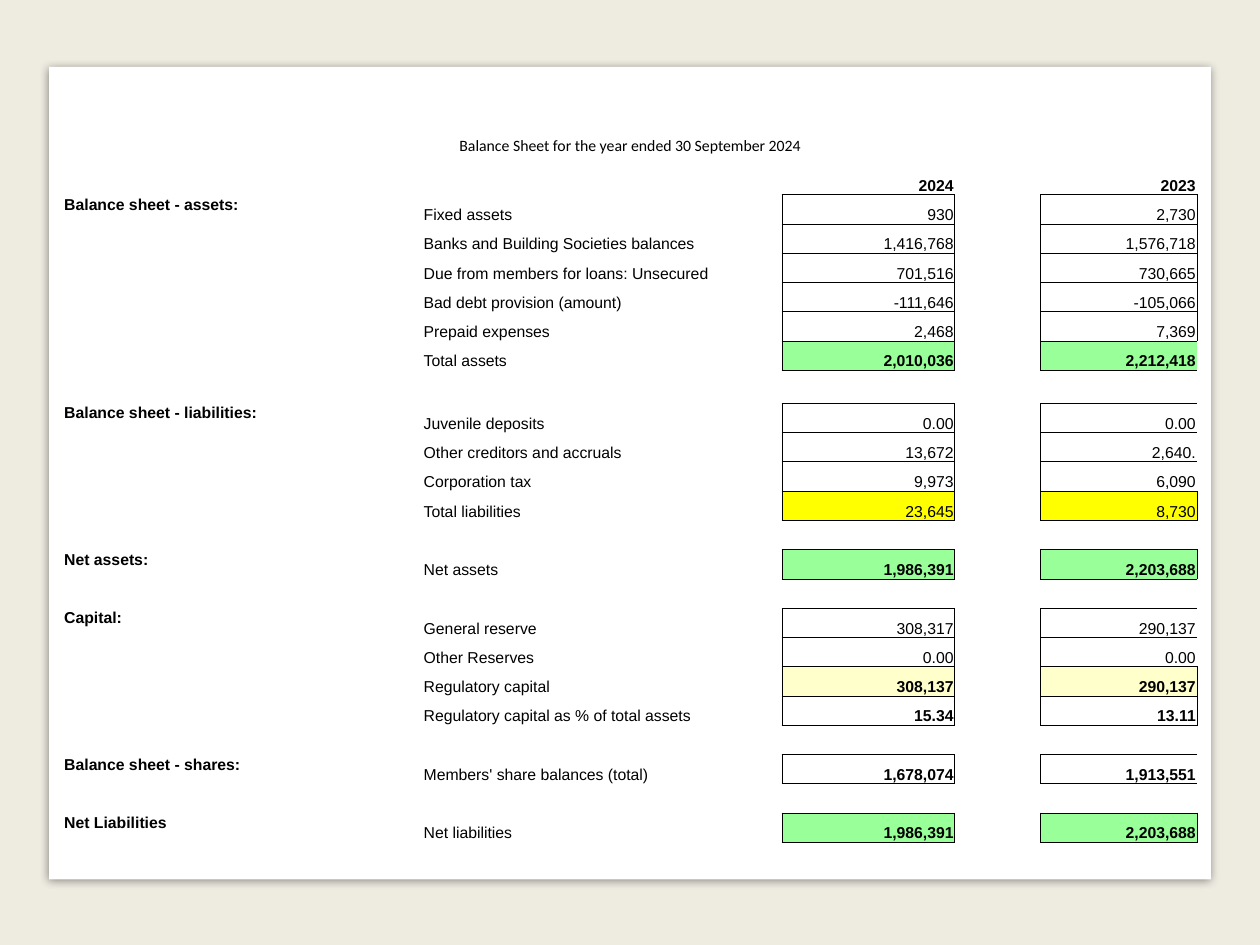
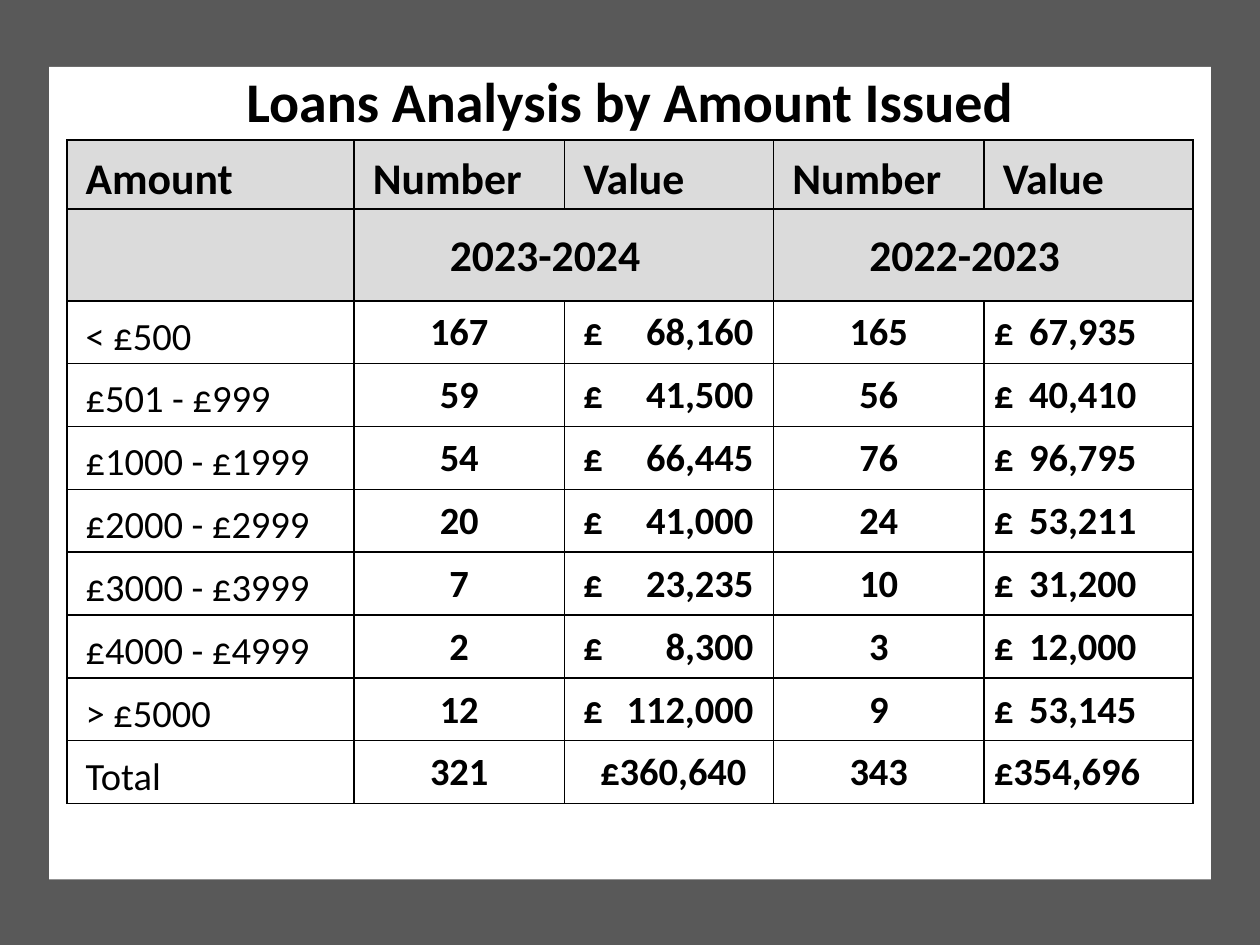
from lxml import etree
from pptx import Presentation
from pptx.dml.color import RGBColor
from pptx.enum.shapes import MSO_SHAPE
from pptx.enum.text import MSO_ANCHOR, PP_ALIGN
from pptx.oxml.ns import qn
from pptx.util import Inches, Pt

RECT = MSO_SHAPE.RECTANGLE
LEFT, MID, RIGHT = PP_ALIGN.LEFT, PP_ALIGN.CENTER, PP_ALIGN.RIGHT
TOP, CENTRE, BASE = MSO_ANCHOR.TOP, MSO_ANCHOR.MIDDLE, MSO_ANCHOR.BOTTOM
COLORS = {"ink": "000000", "white": "FFFFFF", "cream": "EEECE1", "slate": "595959",
          "head": "DBDBDB", "green": "99FF99", "yellow": "FFFF00", "pale": "FFFFCC"}
UNIT = Inches(0.1)
COLS, ROWS = 100, 75
PLAIN = "{2D5ABB26-0587-4C30-8999-92F81FD0307C}"
TIGHT = (0.01, 0.01, 0.01, 0)
WIDE = (0.15, 0.02, 0.15, 0)
EDGES = "LRTB"

GROUPS = [
    ("Balance sheet - assets:", [
        ("Fixed assets", "930", "2,730", None, False, ""),
        ("Banks and Building Societies balances", "1,416,768", "1,576,718", None, False, ""),
        ("Due from members for loans: Unsecured", "701,516", "730,665", None, False, ""),
        ("Bad debt provision (amount)", "-111,646", "-105,066", None, False, ""),
        ("Prepaid expenses", "2,468", "7,369", None, False, ""),
        ("Total assets", "2,010,036", "2,212,418", "green", True, "both")]),
    ("Balance sheet - liabilities:", [
        ("Juvenile deposits", "0.00", "0.00", None, False, "last"),
        ("Other creditors and accruals", "13,672", "2,640.", None, False, "last"),
        ("Corporation tax", "9,973", "6,090", None, False, "last"),
        ("Total liabilities", "23,645", "8,730", "yellow", False, "")]),
    ("Net assets:", [
        ("Net assets", "1,986,391", "2,203,688", "green", True, "")]),
    ("Capital:", [
        ("General reserve", "308,317", "290,137", None, False, "last"),
        ("Other Reserves", "0.00", "0.00", None, False, "both"),
        ("Regulatory capital", "308,137", "290,137", "pale", True, ""),
        ("Regulatory capital as % of total assets", "15.34", "13.11", None, True, "")]),
    ("Balance sheet - shares:", [
        ("Members' share balances (total)", "1,678,074", "1,913,551", "white", True, "last")]),
    ("Net Liabilities", [
        ("Net liabilities", "1,986,391", "2,203,688", "green", True, "")]),
]

LOANS = [
    ("< £500", "167", "68,160", "165", "67,935"),
    ("£501 - £999", "59", "41,500", "56", "40,410"),
    ("£1000 - £1999", "54", "66,445", "76", "96,795"),
    ("£2000 - £2999", "20", "41,000", "24", "53,211"),
    ("£3000 - £3999", "7", "23,235", "10", "31,200"),
    ("£4000 - £4999", "2", "8,300", "3", "12,000"),
    ("> £5000", "12", "112,000", "9", "53,145"),
    ("Total", "321", "360,640", "343", "354,696"),
]


def color(name):
    return RGBColor.from_string(COLORS[name])


def grid(box):
    return [round(part * UNIT) for part in box]


def style(para, size, bold, face, align=LEFT):
    para.alignment = align
    for run in para.runs:
        font = run.font
        font.size, font.bold, font.name = Pt(size), bold, face
        font.color.rgb = color("ink")


def panel(slide, box, fill):
    shape = slide.shapes.add_shape(RECT, *grid(box))
    shape.shadow.inherit = False
    shape.fill.solid()
    shape.fill.fore_color.rgb = color(fill)
    shape.line.fill.background()
    return shape


def shade(shape):
    effects = shape.element.spPr.find(qn("a:effectLst"))
    outer = etree.SubElement(effects, qn("a:outerShdw"), blurRad=str(Pt(5)),
                             dist=str(Pt(1.4)), dir="5400000", rotWithShape="0")
    tint = etree.SubElement(outer, qn("a:srgbClr"), val=COLORS["ink"])
    etree.SubElement(tint, qn("a:alpha"), val="43000")


def frame(slide, back):
    panel(slide, (0, 0, COLS, ROWS), back)
    return panel(slide, (3.9, 5.3, 92.2, 64.5), "white")


def sheet(slide, box, cols, rows):
    left, top, width, height = grid(box)
    item = slide.shapes.add_table(len(rows), len(cols), left, top, width, height)
    table = item.table
    table.first_row = table.horz_banding = False
    for mark in item.element.iter(qn("a:tableStyleId")):
        mark.text = PLAIN
    for col, share in zip(table.columns, cols):
        col.width = round(width * share / sum(cols))
    for row, share in zip(table.rows, rows):
        row.height = round(height * share / sum(rows))
    return table


def border(cell, edges, weight):
    props = cell._tc.get_or_add_tcPr()
    for place, edge in enumerate(edges):
        line = etree.Element(qn(f"a:ln{edge}"), w=str(Pt(weight)))
        fill = etree.SubElement(line, qn("a:solidFill"))
        etree.SubElement(fill, qn("a:srgbClr"), val=COLORS["ink"])
        props.insert(place, line)


def pad(cell, inset, anchor, fill=None):
    (cell.margin_left, cell.margin_top,
     cell.margin_right, cell.margin_bottom) = map(Inches, inset)
    cell.vertical_anchor = anchor
    if fill:
        cell.fill.solid()
        cell.fill.fore_color.rgb = color(fill)
    else:
        cell.fill.background()


def write(cell, text, size, bold, face, align=LEFT):
    cell.text_frame.text = text
    para = cell.text_frame.paragraphs[0]
    style(para, size, bold, face, align)
    return para


def balance(slide, box):
    count = 2 + sum(len(items) for _, items in GROUPS) + len(GROUPS) - 1
    heights = [0.23] * count
    heights[0], heights[8] = 0.24, 0.26
    table = sheet(slide, box, (2.85, 2.85, 1.37, 0.68, 1.24), heights)
    for cell in table.iter_cells():
        pad(cell, TIGHT, BASE)
        para = cell.text_frame.paragraphs[0]
        etree.SubElement(para._p, qn("a:endParaRPr"), sz="900")
    head = table.cell(0, 0)
    head.merge(table.cell(0, 4))
    head.vertical_anchor = TOP
    write(head, "Balance Sheet for the year ended 30 September 2024",
          9, False, "Calibri", MID)
    for col, year in ((2, "2024"), (4, "2023")):
        write(table.cell(1, col), year, 9, True, "Arial", RIGHT)
    row = 2
    for name, items in GROUPS:
        group = table.cell(row, 0)
        if len(items) > 1:
            group.merge(table.cell(row + len(items) - 1, 0))
        group.vertical_anchor = TOP
        write(group, name, 9, True, "Arial")
        for label, now, past, fill, bold, gap in items:
            write(table.cell(row, 1), label, 9, False, "Arial")
            for col, value in ((2, now), (4, past)):
                cell = table.cell(row, col)
                pad(cell, TIGHT, BASE, fill)
                write(cell, value, 9, bold, "Arial", RIGHT)
                bare = gap == "both" or (gap == "last" and col == 4)
                border(cell, "LTB" if bare else EDGES, 0.5)
            row += 1
        row += 1


def loose(para):
    para.line_spacing = 1.15
    para.space_after = Pt(10)


def pounds(cell, value, start, stop):
    pad(cell, (start, 0.01, 0.01, 0), CENTRE)
    cell.text_frame.text = "£\t" + value
    para = cell.text_frame.paragraphs[0]
    props = para._p.get_or_add_pPr()
    tabs = etree.SubElement(props, qn("a:tabLst"))
    etree.SubElement(tabs, qn("a:tab"), pos=str(Inches(stop - start)), algn="r")
    style(para, 22, True, "Calibri")


def loans(slide, box):
    table = sheet(slide, box, (2.28, 1.67, 1.66, 1.67, 1.66),
                  [0.55, 0.73] + [0.5] * len(LOANS))
    for cell in table.iter_cells():
        border(cell, EDGES, 1)
    for col, name in enumerate(("Amount", "Number", "Value", "Number", "Value")):
        cell = table.cell(0, col)
        pad(cell, WIDE, CENTRE, "head")
        loose(write(cell, name, 25, True, "Calibri"))
    pad(table.cell(1, 0), WIDE, TOP, "head")
    for col, years in ((1, "2023-2024"), (3, "2022-2023")):
        cell = table.cell(1, col)
        cell.merge(table.cell(1, col + 1))
        pad(cell, (0.76, 0.1, 0.2, 0.1), TOP, "head")
        loose(write(cell, years, 25, True, "Calibri"))
    for row, (band, *values) in enumerate(LOANS, 2):
        cell = table.cell(row, 0)
        pad(cell, WIDE, CENTRE)
        loose(write(cell, band, 22, False, "Calibri"))
        for col, value in enumerate(values, 1):
            cell = table.cell(row, col)
            if col % 2:
                pad(cell, TIGHT, CENTRE)
                write(cell, value, 22, True, "Calibri", MID)
            elif band == "Total":
                pad(cell, (0.08, 0.01, 0.01, 0), CENTRE)
                write(cell, "£" + value, 22, True, "Calibri", MID if col == 2 else LEFT)
            else:
                pounds(cell, value, *((0.15, 1.5) if col == 2 else (0.08, 1.21)))


def heading(slide, box, text):
    title = slide.shapes.title
    title.left, title.top, title.width, title.height = grid(box)
    title.text_frame.text = text
    title.text_frame.vertical_anchor = TOP
    style(title.text_frame.paragraphs[0], 32, True, "Calibri", MID)
    title.element.getparent().append(title.element)


def main():
    deck = Presentation()
    deck.slide_width, deck.slide_height = COLS * UNIT, ROWS * UNIT
    first = deck.slides.add_slide(deck.slide_layouts[6])
    shade(frame(first, "cream"))
    balance(first, (5, 10.7, 90, 56.2))
    second = deck.slides.add_slide(deck.slide_layouts[5])
    frame(second, "slate")
    loans(second, (5.3, 11.1, 89.4, 52.7))
    heading(second, (15.6, 4.8, 68.8, 6.4), "Loans Analysis by Amount Issued")
    deck.save("out.pptx")


if __name__ == "__main__":
    main()
